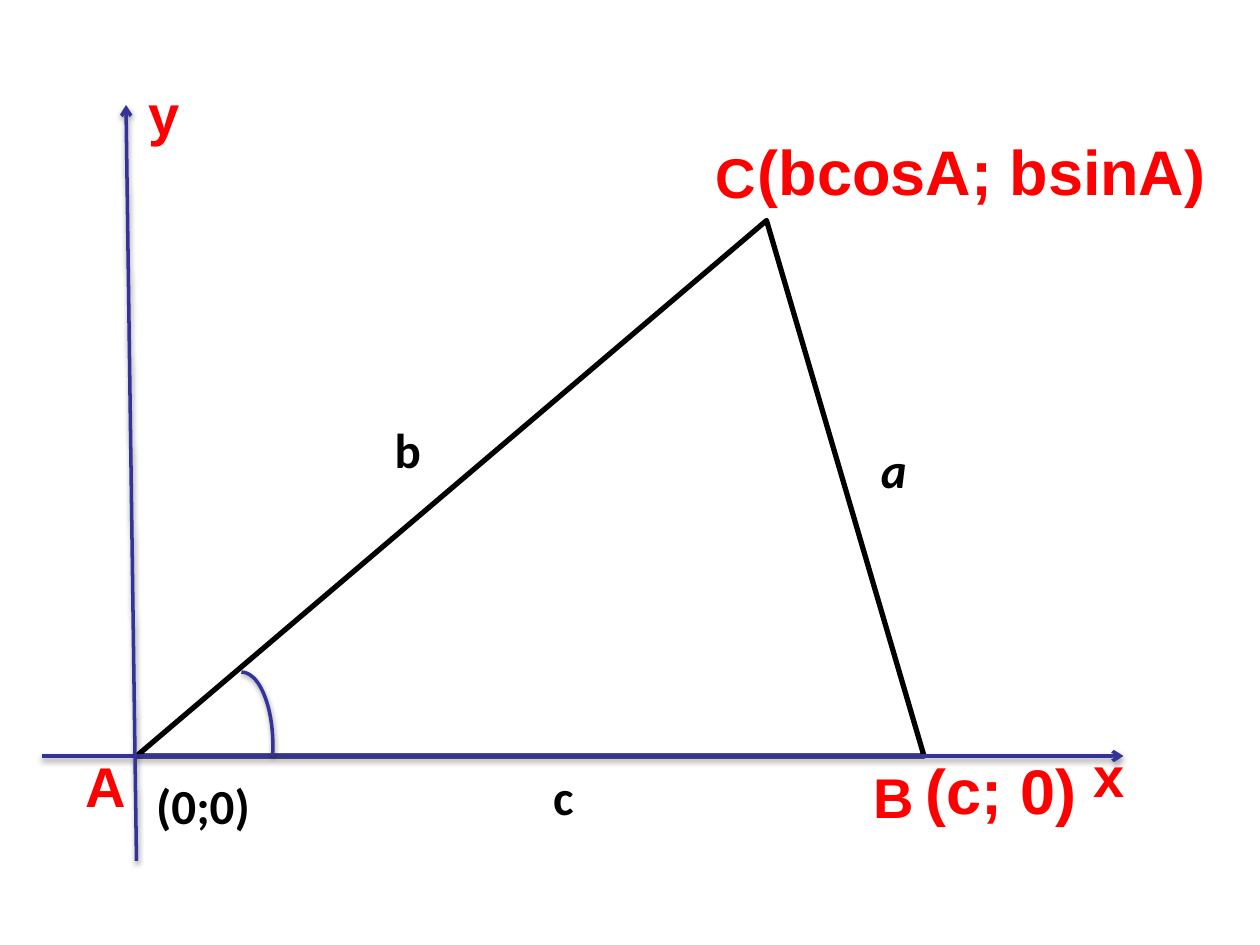
from lxml import etree
from pptx import Presentation
from pptx.dml.color import RGBColor
from pptx.enum.shapes import MSO_CONNECTOR, MSO_SHAPE
from pptx.enum.text import MSO_AUTO_SIZE
from pptx.oxml import parse_xml
from pptx.oxml.ns import nsdecls, qn
from pptx.util import Inches, Pt

TRIANGLE, ARC = MSO_SHAPE.ISOSCELES_TRIANGLE, MSO_SHAPE.ARC
STRAIGHT = MSO_CONNECTOR.STRAIGHT
FIT_TEXT = MSO_AUTO_SIZE.SHAPE_TO_FIT_TEXT
RED, BLACK, WHITE, BLUE = "FF0000", "000000", "FFFFFF", "333399"
SHADOW = (
    f'<a:effectLst {nsdecls("a")}>'
    '<a:outerShdw blurRad="39370" dist="20320" dir="5400000" rotWithShape="0">'
    '<a:srgbClr val="000000"><a:alpha val="38000"/></a:srgbClr>'
    '</a:outerShdw></a:effectLst>'
)


def color(hex_string):
    return RGBColor.from_string(hex_string)


def style_blue_line(shape):
    """Give an axis or the angle mark its blue line and soft shadow below."""
    shape.line.color.rgb = color(BLUE)
    shape.line.width = Pt(2)
    shape._element.spPr.append(parse_xml(SHADOW))


presentation = Presentation()
presentation.slide_width = Inches(10)
presentation.slide_height = Inches(7.5)
slide = presentation.slides.add_slide(presentation.slide_layouts[6])
shapes = slide.shapes

# The slide is a grid of 120 columns and 90 rows of square cells.
cell = presentation.slide_width / 120
origin_column, axis_row = 13, 72

# Triangle ABC
base, height = 75, 51
triangle = shapes.add_shape(
    TRIANGLE, int(origin_column * cell), int((axis_row - height) * cell),
    int(base * cell), int(height * cell))
triangle.adjustments[0] = 0.8
triangle.shadow.inherit = False
triangle.fill.solid()
triangle.fill.fore_color.rgb = color(WHITE)
triangle.line.color.rgb = color(BLACK)
triangle.line.width = Pt(3)

# Axes: start column, start row, end column, end row
x_axis = (4, axis_row, 107, axis_row)
y_axis = (origin_column, 82, origin_column - 1, 10)
for ends in (x_axis, y_axis):
    axis = shapes.add_connector(STRAIGHT, *(int(end * cell) for end in ends))
    style_blue_line(axis)
    etree.SubElement(axis.line._get_or_add_ln(), qn("a:tailEnd"), type="arrow")

# Mark of angle A
angle_mark = shapes.add_shape(
    ARC, int(20 * cell), int(64 * cell), int(6 * cell), int(14 * cell))
angle_mark.adjustments[0] = 162
angle_mark.adjustments[1] = 10.73
angle_mark.fill.background()
style_blue_line(angle_mark)

# Label kinds: height in rows, font, size, colour, wrap
POINT = (7.7, "Arial", 32, RED, True)
COORDINATES = (8.5, "Arial", 36, RED, False)
SIDE = (6.8, "Calibri", 28, BLACK, False)

# Labels: text, left column, top row, width in columns, kind
labels = [
    ("А", 7, 71, 8, POINT),
    ("С", 67, 13, 6, POINT),
    ("В", 82, 72, 7, POINT),
    ("у", 13, 7, 8, POINT),
    ("х", 103, 70, 8, POINT),
    ("(bcosA; bsinA)", 71, 12, 45.5, COORDINATES),
    ("(с; 0)", 87, 71, 16.9, COORDINATES),
    ("b", 36.4, 39.4, 4.9, SIDE),
    ("a", 82.7, 41.3, 4.9, SIDE),
    ("c", 51.5, 72.4, 4.4, SIDE),
    ("(0;0)", 13.7, 73.3, 11.5, SIDE),
]
for text, column, row, columns, kind in labels:
    rows, font_name, size, font_color, wrap = kind
    label = shapes.add_textbox(
        int(column * cell), int(row * cell), int(columns * cell), int(rows * cell))
    label.text_frame.word_wrap = wrap
    label.text_frame.auto_size = FIT_TEXT
    paragraph = label.text_frame.paragraphs[0]
    paragraph.text = text
    paragraph.font.name = font_name
    paragraph.font.size = Pt(size)
    paragraph.font.bold = True
    paragraph.font.italic = text == "a"
    paragraph.font.color.rgb = color(font_color)

presentation.save("out.pptx")
